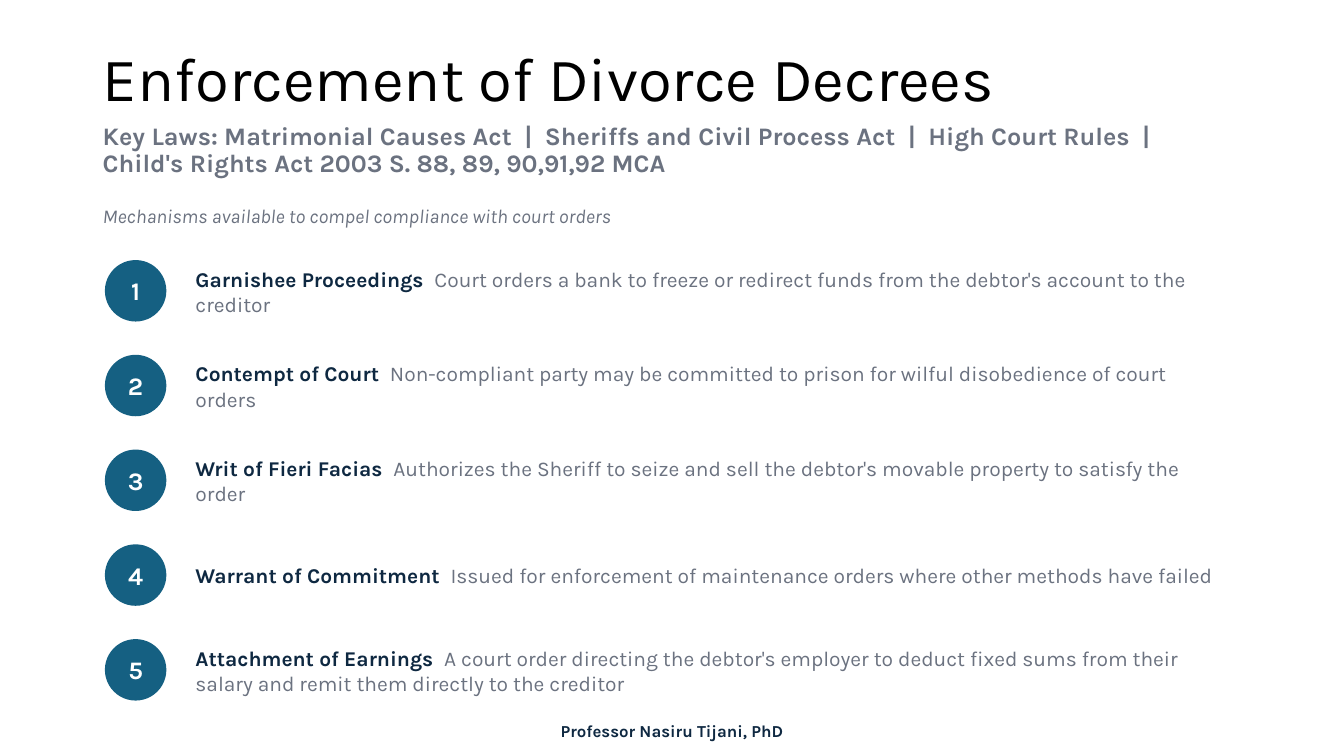
from pptx import Presentation
from pptx import util as u
from pptx.dml.color import RGBColor
from pptx.enum import shapes, text

FONT = "Karla"
INK = {"black": "000000", "gray": "6B7280", "teal": "156082",
       "navy": "0E2841", "white": "FFFFFF"}
LAWS = ("Key Laws: Matrimonial Causes Act  |  Sheriffs and Civil Process Act  |  "
        "High Court Rules  |  Child's Rights Act 2003 S. 88, 89, 90,91,92 MCA")
ITEMS = [
    ("Garnishee Proceedings",
     "Court orders a bank to freeze or redirect funds from the debtor's account to the creditor"),
    ("Contempt of Court",
     "Non-compliant party may be committed to prison for wilful disobedience of court orders"),
    ("Writ of Fieri Facias",
     "Authorizes the Sheriff to seize and sell the debtor's movable property to satisfy the order"),
    ("Warrant of Commitment",
     "Issued for enforcement of maintenance orders where other methods have failed"),
    ("Attachment of Earnings",
     "A court order directing the debtor's employer to deduct fixed sums from their salary "
     "and remit them directly to the creditor"),
]


def style(run, size, ink, bold=False, italic=False):
    font = run.font
    font.name, font.size = FONT, u.Pt(size)
    font.bold, font.italic = bold, italic
    font.color.rgb = RGBColor.from_string(INK[ink])


def add_box(slide, x, y, w, h, anchor=text.MSO_ANCHOR.MIDDLE):
    box = slide.shapes.add_textbox(*map(u.Inches, (x, y, w, h)))
    frame = box.text_frame
    frame.word_wrap = True
    frame.vertical_anchor = anchor
    return frame


def add_head(slide, x, y, w, h):
    frame = add_box(slide, x, y, w, h)
    frame.text = "Enforcement of Divorce Decrees"
    title = frame.paragraphs[0]
    laws = frame.add_paragraph()
    laws.text = LAWS
    laws.space_before = u.Pt(6)
    title.line_spacing = laws.line_spacing = 0.9
    style(title.runs[0], 44, "black")
    style(laws.runs[0], 18, "gray", bold=True)


def add_lead(slide, x, y, w, h):
    frame = add_box(slide, x, y, w, h, text.MSO_ANCHOR.TOP)
    frame.text = "Mechanisms available to compel compliance with court orders"
    para = frame.paragraphs[0]
    para.line_spacing = 0.9
    style(para.runs[0], 14, "gray", italic=True)


def add_badge(slide, x, y, size, label):
    disc = slide.shapes.add_shape(shapes.MSO_SHAPE.OVAL,
                                  *map(u.Inches, (x, y, size, size)))
    disc.shadow.inherit = False
    disc.fill.solid()
    disc.fill.fore_color.rgb = RGBColor.from_string(INK["teal"])
    disc.line.fill.background()
    frame = disc.text_frame
    frame.text = label
    frame.vertical_anchor = text.MSO_ANCHOR.MIDDLE
    para = frame.paragraphs[0]
    para.alignment = text.PP_ALIGN.CENTER
    style(para.runs[0], 18, "white", bold=True)


def add_item(slide, x, y, w, h, label, name, note):
    add_badge(slide, x, y + 0.05, 0.61, label)
    para = add_box(slide, x + 0.8, y, w - 0.8, h).paragraphs[0]
    for words, ink, bold in ((name + "  ", "navy", True), (note, "gray", False)):
        run = para.add_run()
        run.text = words
        style(run, 15, ink, bold)


def add_list(slide, x, y, w, step):
    for i, (name, note) in enumerate(ITEMS):
        add_item(slide, x, y + i * step, w, 0.72, str(i + 1), name, note)


def add_foot(slide, x, y, w, h):
    frame = add_box(slide, x, y, w, h)
    frame.text = "Professor Nasiru Tijani, PhD"
    para = frame.paragraphs[0]
    para.alignment = text.PP_ALIGN.CENTER
    style(para.runs[0], 12, "navy", bold=True)


def main():
    deck = Presentation()
    deck.slide_width, deck.slide_height = u.Inches(13.33), u.Inches(7.5)
    slide = deck.slides.add_slide(deck.slide_layouts[6])
    add_head(slide, 0.92, 0.4, 11.5, 1.45)
    add_lead(slide, 0.92, 2, 11.5, 0.33)
    add_list(slide, 1.04, 2.53, 11.19, 0.94)
    add_foot(slide, 0, 7.09, 13.33, 0.33)
    deck.save("out.pptx")


if __name__ == "__main__":
    main()
